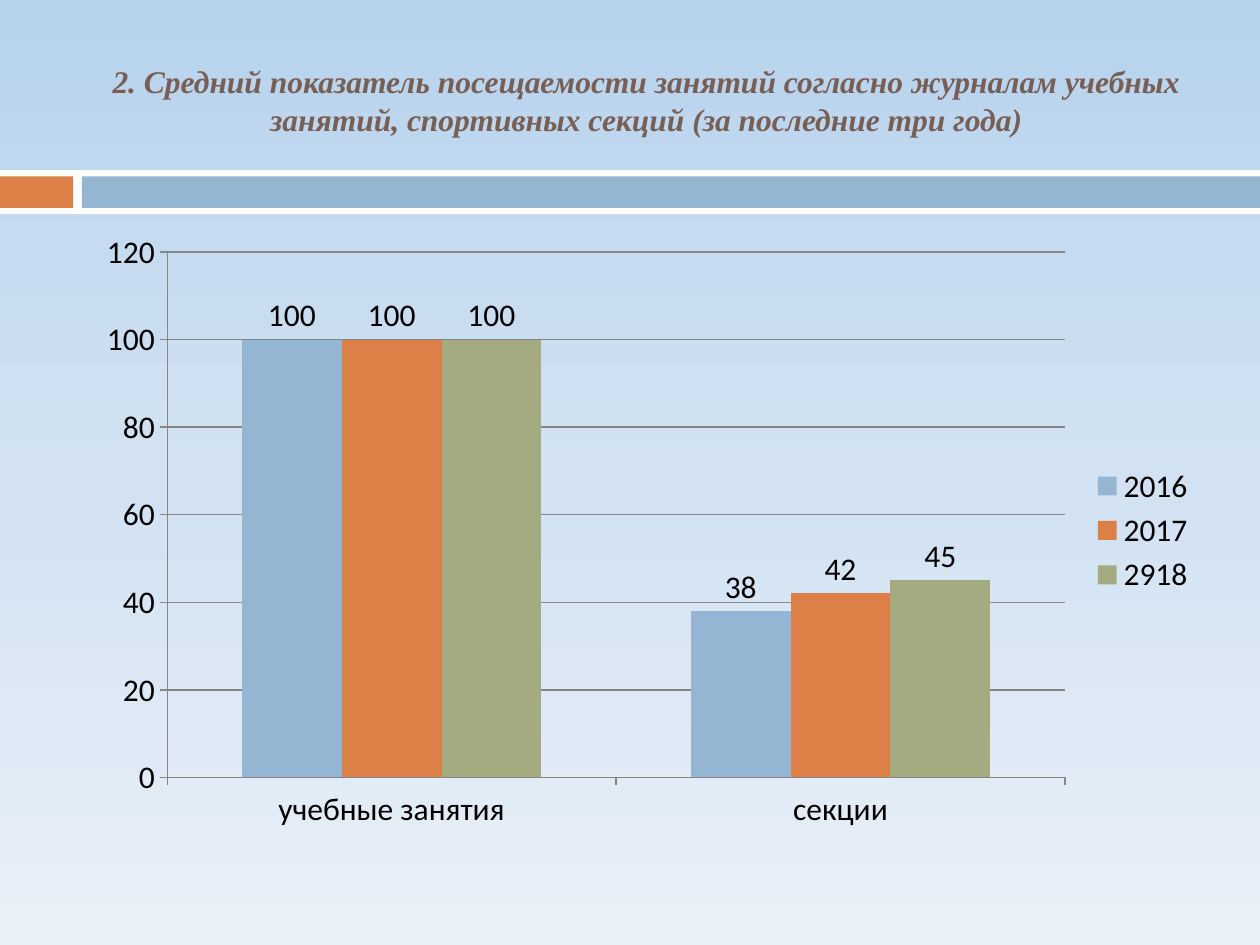
from copy import deepcopy

from pptx import Presentation, util as u
from pptx.chart.data import CategoryChartData
from pptx.dml.color import RGBColor
from pptx.enum import chart as ch, shapes, text

WIDTH, HEIGHT = 10, 7.5
COLORS = {
    "sky_top": "B7D3ED", "sky_middle": "D2E2F2", "sky_bottom": "E8F0F8",
    "white": "FFFFFF", "blue": "94B6D2", "orange": "DD8047", "olive": "A5AB81",
    "brown": "775F55", "black": "000000", "grid": "868686",
}
TITLE = ("2. Средний показатель посещаемости занятий согласно журналам учебных "
         "занятий, спортивных секций (за последние три года)")
ACTIVITIES = ["учебные занятия", "секции"]
ATTENDANCE = [("2016", (100, 38), "blue"), ("2017", (100, 42), "orange"),
              ("2918", (100, 45), "olive")]


def rgb(name):
    """Return the named palette colour."""
    return RGBColor.from_string(COLORS[name])


def inches(box):
    """Convert a left, top, width, height box to lengths."""
    return [u.Inches(side) for side in box]


def style_font(font, size, color, name, bold=False, italic=False):
    """Set every property of a font."""
    font.size, font.name, font.bold, font.italic = u.Pt(size), name, bold, italic
    font.color.rgb = rgb(color)


def add_text(slide, box, words, **style):
    """Place centred, wrapped text in the box."""
    frame = slide.shapes.add_textbox(*inches(box)).text_frame
    frame.word_wrap = True
    frame.vertical_anchor = text.MSO_ANCHOR.MIDDLE
    paragraph = frame.paragraphs[0]
    paragraph.alignment = text.PP_ALIGN.CENTER
    run = paragraph.add_run()
    run.text = words
    style_font(run.font, **style)


def add_bar(slide, box, color):
    """Place a plain filled rectangle."""
    bar = slide.shapes.add_shape(shapes.MSO_SHAPE.RECTANGLE, *inches(box))
    bar.shadow.inherit = False
    bar.fill.solid()
    bar.fill.fore_color.rgb = rgb(color)
    bar.line.fill.background()


def paint_background(slide):
    """Shade the slide from top to bottom in three stops."""
    fill = slide.background.fill
    fill.gradient()
    fill.gradient_angle = 270
    first = fill.gradient_stops[0]._gs
    first.addnext(deepcopy(first))
    for stop, position, color in zip(fill.gradient_stops, (0, 0.5, 1),
                                     ("sky_top", "sky_middle", "sky_bottom")):
        stop.position = position
        stop.color.rgb = rgb(color)


def add_divider(slide, box, accent=0.58, gap=0.07, margin=0.05):
    """Place the white band with its accent block and long stripe."""
    left, top, width, height = box
    stripe_top, stripe_height = top + margin, height - 2 * margin
    offset = accent + gap
    add_bar(slide, box, "white")
    add_bar(slide, (left, stripe_top, accent, stripe_height), "orange")
    add_bar(slide, (left + offset, stripe_top, width - offset, stripe_height), "blue")


def add_attendance_chart(slide, box):
    """Place the clustered columns of attendance by year."""
    data = CategoryChartData(number_format="General")
    data.categories = ACTIVITIES
    for year, values, _ in ATTENDANCE:
        data.add_series(year, values)
    chart = slide.shapes.add_chart(
        ch.XL_CHART_TYPE.COLUMN_CLUSTERED, *inches(box), data).chart
    style_font(chart.font, 18, "black", "Calibri")
    chart.has_title = False
    chart.has_legend = True
    chart.legend.position = ch.XL_LEGEND_POSITION.RIGHT
    chart.legend.include_in_layout = False

    plot = chart.plots[0]
    plot.gap_width, plot.overlap, plot.vary_by_categories = 150, 0, False
    for series, (_, _, color) in zip(plot.series, ATTENDANCE):
        series.format.fill.solid()
        series.format.fill.fore_color.rgb = rgb(color)
        series.data_labels.show_value = True
        series.data_labels.position = ch.XL_LABEL_POSITION.OUTSIDE_END

    scale = chart.value_axis
    scale.minimum_scale, scale.maximum_scale, scale.major_unit = 0, 120, 20
    scale.has_major_gridlines = True
    for axis in (chart.category_axis, scale):
        axis.major_tick_mark = ch.XL_TICK_MARK.OUTSIDE
        axis.minor_tick_mark = ch.XL_TICK_MARK.NONE
    for part in (chart.category_axis, scale, scale.major_gridlines):
        part.format.line.color.rgb = rgb("grid")
        part.format.line.width = u.Pt(0.75)


def main():
    """Build and save the attendance slide."""
    deck = Presentation()
    deck.slide_width, deck.slide_height = u.Inches(WIDTH), u.Inches(HEIGHT)
    slide = deck.slides.add_slide(deck.slide_layouts[6])
    left, content_width = WIDTH * 0.067, WIDTH * 0.892
    paint_background(slide)
    add_divider(slide, (0, HEIGHT * 0.18, WIDTH, 0.35))
    add_text(slide, (left, 0.25, content_width, 1.08), TITLE, size=18, color="brown",
             name="Times New Roman", bold=True, italic=True)
    add_attendance_chart(slide, (left, 1.75, content_width, 4.92))
    deck.save("out.pptx")


if __name__ == "__main__":
    main()
